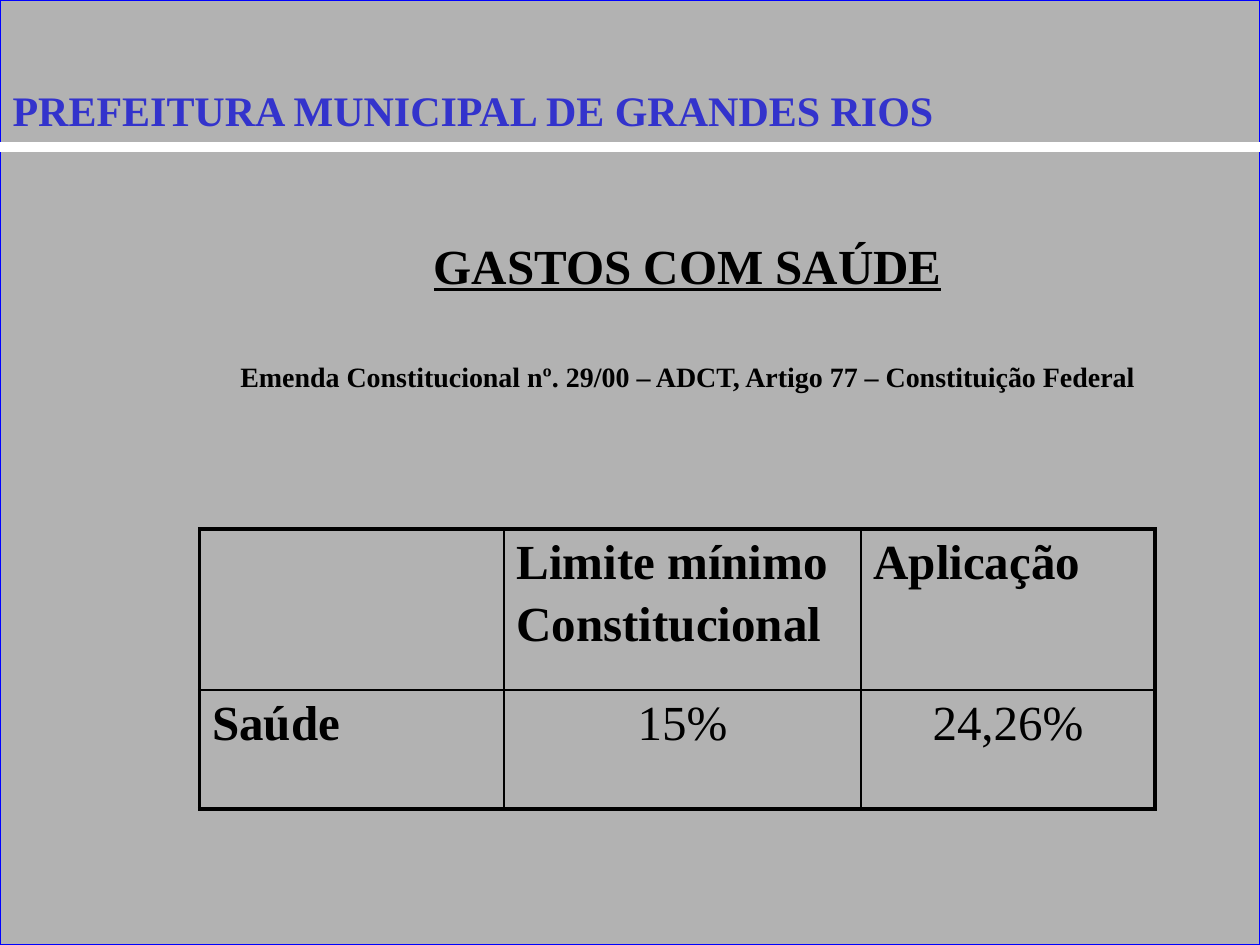
from dataclasses import dataclass

from lxml.etree import SubElement
from pptx import Presentation
from pptx.dml.color import RGBColor
from pptx.enum.shapes import MSO_CONNECTOR, MSO_SHAPE
from pptx.enum.text import MSO_ANCHOR, MSO_AUTO_SIZE, PP_ALIGN
from pptx.oxml.ns import qn
from pptx.util import Pt


@dataclass(frozen=True)
class Theme:
    font: str = "Times New Roman"
    backdrop: str = "B2B2B2"
    frame: str = "0000FF"
    rule: str = "FFFFFF"
    banner: str = "3333CC"
    shadow: str = "808080"
    ink: str = "000000"
    banner_size: float = 24
    large: float = 28
    small: float = 16
    outer_border: float = 2.25
    inner_border: float = 1


@dataclass(frozen=True)
class Entry:
    lines: tuple[str, ...] = ()
    bold: bool = True
    align: PP_ALIGN = PP_ALIGN.LEFT


THEME = Theme()
WIDTH, HEIGHT = 720, 540
COLUMN_WIDTHS = (174, 204, 168)
ROW_HEIGHTS = (92, 68)
SPENDING = (
    (Entry(), Entry(("Limite mínimo", "Constitucional")), Entry(("Aplicação",))),
    (
        Entry(("Saúde",)),
        Entry(("15%",), False, PP_ALIGN.CENTER),
        Entry(("24,26%",), False, PP_ALIGN.CENTER),
    ),
)


def add_run(paragraph, text: str, size: float, color: str = THEME.ink,
            bold: bool = True, underline: bool = False):
    run = paragraph.add_run()
    run.text = text
    font = run.font
    font.name, font.size = THEME.font, Pt(size)
    font.bold, font.underline = bold, underline
    font.color.rgb = RGBColor.from_string(color)
    return run


def add_text_shadow(run) -> None:
    properties = run.font._element
    effects = properties.makeelement(qn("a:effectLst"))
    properties.find(qn("a:solidFill")).addnext(effects)
    shadow = SubElement(effects, qn("a:outerShdw"),
                        dist=str(Pt(2)), dir="2700000", algn="tl")
    SubElement(shadow, qn("a:srgbClr"), val=THEME.shadow)


def set_borders(cell, widths: dict[str, float]) -> None:
    properties = cell._tc.get_or_add_tcPr()
    for position, (side, width) in enumerate(widths.items()):
        line = properties.makeelement(qn(f"a:{side}"), {"w": str(Pt(width))})
        fill = SubElement(line, qn("a:solidFill"))
        SubElement(fill, qn("a:srgbClr"), val=THEME.ink)
        properties.insert(position, line)


def fill_cell(cell, entry: Entry) -> None:
    cell.fill.background()
    for index, text in enumerate(entry.lines):
        frame = cell.text_frame
        paragraph = frame.add_paragraph() if index else frame.paragraphs[0]
        paragraph.alignment = entry.align
        paragraph.space_before = Pt(4.4 if index else 0)
        add_run(paragraph, text, THEME.large, bold=entry.bold)


def add_backdrop(slide) -> None:
    backdrop = slide.shapes.add_shape(
        MSO_SHAPE.RECTANGLE, Pt(0), Pt(0), Pt(WIDTH), Pt(HEIGHT))
    backdrop.shadow.inherit = False
    backdrop.fill.solid()
    backdrop.fill.fore_color.rgb = RGBColor.from_string(THEME.backdrop)
    backdrop.line.color.rgb = RGBColor.from_string(THEME.frame)
    backdrop.line.width = Pt(0.75)


def add_rule(slide, y: float) -> None:
    rule = slide.shapes.add_connector(
        MSO_CONNECTOR.STRAIGHT, Pt(0), Pt(y), Pt(WIDTH), Pt(y))
    rule.line.color.rgb = RGBColor.from_string(THEME.rule)
    rule.line.width = Pt(6)
    SubElement(rule._element.spPr, qn("a:effectLst"))


def add_heading(slide) -> None:
    heading = slide.shapes.add_textbox(Pt(102), Pt(114), Pt(582), Pt(126))
    frame = heading.text_frame
    frame.word_wrap = True
    topic, legal_basis = frame.paragraphs[0], frame.add_paragraph()
    for paragraph in (topic, legal_basis):
        paragraph.alignment = PP_ALIGN.CENTER
        paragraph.line_spacing = 1.5
    legal_basis.space_before = Pt(27.6)
    add_run(topic, "GASTOS COM SAÚDE", THEME.large, underline=True)
    add_run(legal_basis,
            "Emenda Constitucional nº. 29/00 – ADCT, Artigo 77 – Constituição Federal",
            THEME.small)


def add_spending_table(slide) -> None:
    rows, columns = len(ROW_HEIGHTS), len(COLUMN_WIDTHS)
    table = slide.shapes.add_table(
        rows, columns, Pt(114), Pt(302.4),
        Pt(sum(COLUMN_WIDTHS)), Pt(sum(ROW_HEIGHTS))).table
    table.first_row = table.horz_banding = False
    for column, width in zip(table.columns, COLUMN_WIDTHS):
        column.width = Pt(width)
    for row, height in zip(table.rows, ROW_HEIGHTS):
        row.height = Pt(height)
    for r, entries in enumerate(SPENDING):
        for c, entry in enumerate(entries):
            cell = table.cell(r, c)
            fill_cell(cell, entry)
            # Thick lines around the table, thin lines inside it
            on_edge = {"lnL": c == 0, "lnR": c == columns - 1,
                       "lnT": r == 0, "lnB": r == rows - 1}
            set_borders(cell, {
                side: THEME.outer_border if edge else THEME.inner_border
                for side, edge in on_edge.items()})


def place_title(slide) -> None:
    title = slide.shapes.title
    title.left, title.top = Pt(0), Pt(42)
    title.width, title.height = Pt(592), Pt(36)
    frame = title.text_frame
    frame.auto_size = MSO_AUTO_SIZE.NONE
    frame.vertical_anchor = MSO_ANCHOR.TOP
    frame.margin_top = Pt(6.5)
    frame.margin_bottom = Pt(0)
    paragraph = frame.paragraphs[0]
    paragraph.alignment = PP_ALIGN.LEFT
    add_text_shadow(add_run(paragraph, "PREFEITURA MUNICIPAL DE GRANDES RIOS",
                            THEME.banner_size, THEME.banner))
    # Bring the title in front of the backdrop
    slide.shapes._spTree.append(title._element)


def main() -> None:
    presentation = Presentation()
    presentation.slide_width, presentation.slide_height = Pt(WIDTH), Pt(HEIGHT)
    slide = presentation.slides.add_slide(presentation.slide_layouts[5])
    add_backdrop(slide)
    add_rule(slide, 84)
    add_heading(slide)
    add_spending_table(slide)
    place_title(slide)
    presentation.save("out.pptx")


if __name__ == "__main__":
    main()
